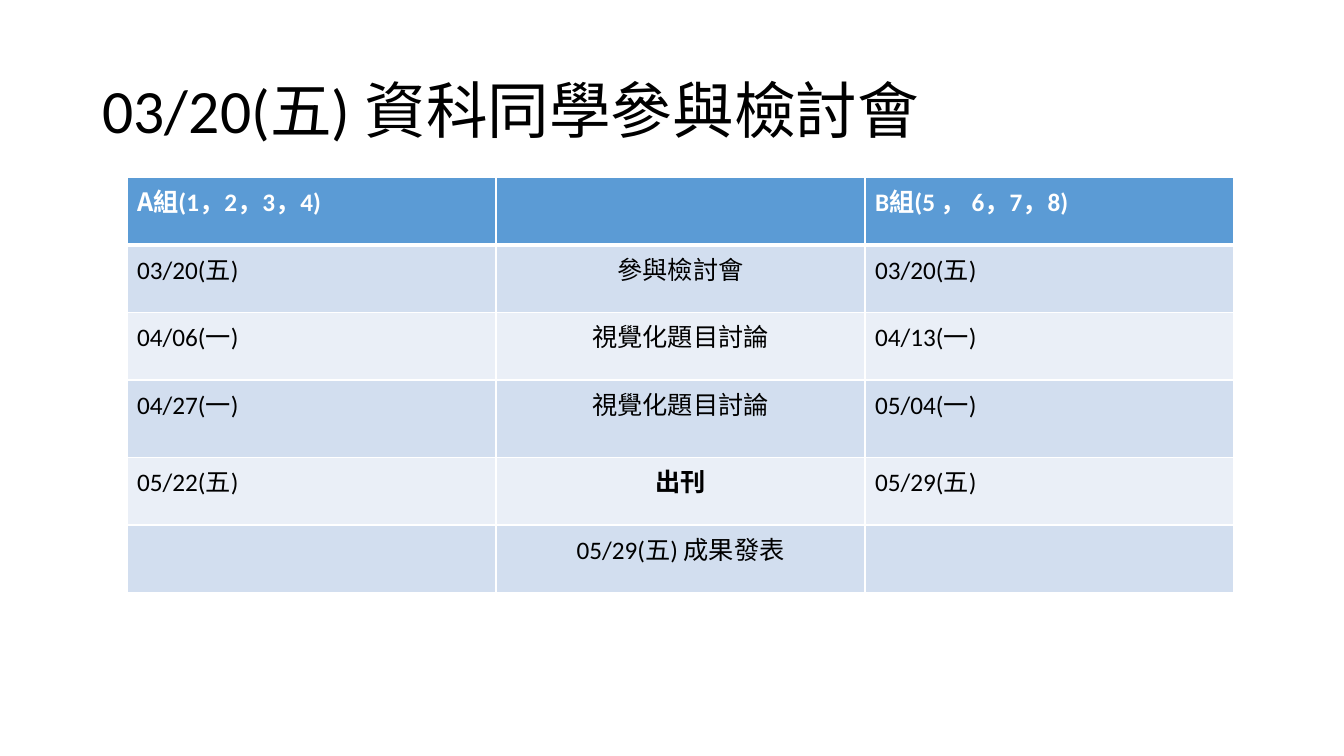
from dataclasses import dataclass

from lxml.etree import SubElement
from pptx import Presentation
from pptx.dml.color import RGBColor
from pptx.enum.text import MSO_ANCHOR as Anchor, PP_ALIGN as Align
from pptx.oxml.ns import qn
from pptx.util import Inches, Pt


@dataclass(frozen=True)
class Theme:
    font: str = "Calibri"
    cjk_font: str = "Noto Sans CJK SC"
    title_size: int = 44
    table_size: int = 18
    ink: str = "000000"
    white: str = "FFFFFF"
    header: str = "5B9BD5"
    bands: tuple = ("D2DEEF", "EAEFF7")
    line: int = 1
    header_line: int = 3


THEME = Theme()
TITLE = "03/20(五) 資科同學參與檢討會"
SCHEDULE = [
    (("A", "組(1，2，3，4)"), (), ("B組(5 ， 6，7，8)",)),
    (("03/20(五)",), ("參與檢討會",), ("03/20(五)",)),
    (("04/06(一)",), ("視覺化題目討論",), ("04/13(一)",)),
    (("04/27(一)",), ("視覺化題目討論",), ("05/04(一)",)),
    (("05/22(五)",), ("出刊",), ("05/29(五)",)),
    ((), ("05/29(五) 成果發表",), ()),
]
ROW_HEIGHT = 0.67
TALL_ROW, TALL_HEIGHT = 3, 0.77
PUBLISHED = "出刊"


def set_font(para, size, color, bold=False):
    font = para.font
    font.name, font.size, font.bold = THEME.font, Pt(size), bold
    font.color.rgb = RGBColor.from_string(color)


def set_borders(cell, bottom):
    """Draw white cell edges; the lines must precede the fill in the cell XML."""
    properties = cell._tc.get_or_add_tcPr()
    widths = {"L": THEME.line, "R": THEME.line, "T": THEME.line, "B": bottom}
    for side, width in widths.items():
        line = SubElement(properties, qn(f"a:ln{side}"), w=str(Pt(width)))
        fill = SubElement(line, qn("a:solidFill"))
        SubElement(fill, qn("a:srgbClr"), val=THEME.white)


def add_title(page, left, top, width, height):
    box = page.shapes.add_textbox(*map(Inches, (left, top, width, height)))
    frame = box.text_frame
    frame.word_wrap = True
    frame.vertical_anchor = Anchor.MIDDLE
    para = frame.paragraphs[0]
    para.text = TITLE
    para.line_spacing = 0.9
    set_font(para, THEME.title_size, THEME.ink)


def fill_cell(cell, spans, row, column):
    is_header = row == 0
    set_borders(cell, THEME.header_line if is_header else THEME.line)
    cell.fill.solid()
    color = THEME.header if is_header else THEME.bands[(row - 1) % 2]
    cell.fill.fore_color.rgb = RGBColor.from_string(color)
    para = cell.text_frame.paragraphs[0]
    set_font(para, THEME.table_size, THEME.white if is_header else THEME.ink,
             is_header or PUBLISHED in spans)
    if column == 1:
        para.alignment = Align.CENTER
    for text in spans:
        span = para.add_run()
        span.text = text
        if text == "A":
            span.font.name = THEME.cjk_font


def add_schedule(page, left, top, width):
    row_count, column_count = len(SCHEDULE), len(SCHEDULE[0])
    heights = [TALL_HEIGHT if row == TALL_ROW else ROW_HEIGHT
               for row in range(row_count)]
    table = page.shapes.add_table(
        row_count, column_count,
        *map(Inches, (left, top, width, sum(heights)))).table
    for column in table.columns:
        column.width = Inches(width / column_count)
    for row, entries in enumerate(SCHEDULE):
        table.rows[row].height = Inches(heights[row])
        for column, spans in enumerate(entries):
            fill_cell(table.cell(row, column), spans, row, column)


def main():
    deck = Presentation()
    deck.slide_width, deck.slide_height = Inches(13.33), Inches(7.5)
    page = deck.slides.add_slide(deck.slide_layouts[6])
    add_title(page, 0.92, 0.4, 11.5, 1.45)
    add_schedule(page, 1.26, 1.76, 10.98)
    deck.save("out.pptx")


if __name__ == "__main__":
    main()
